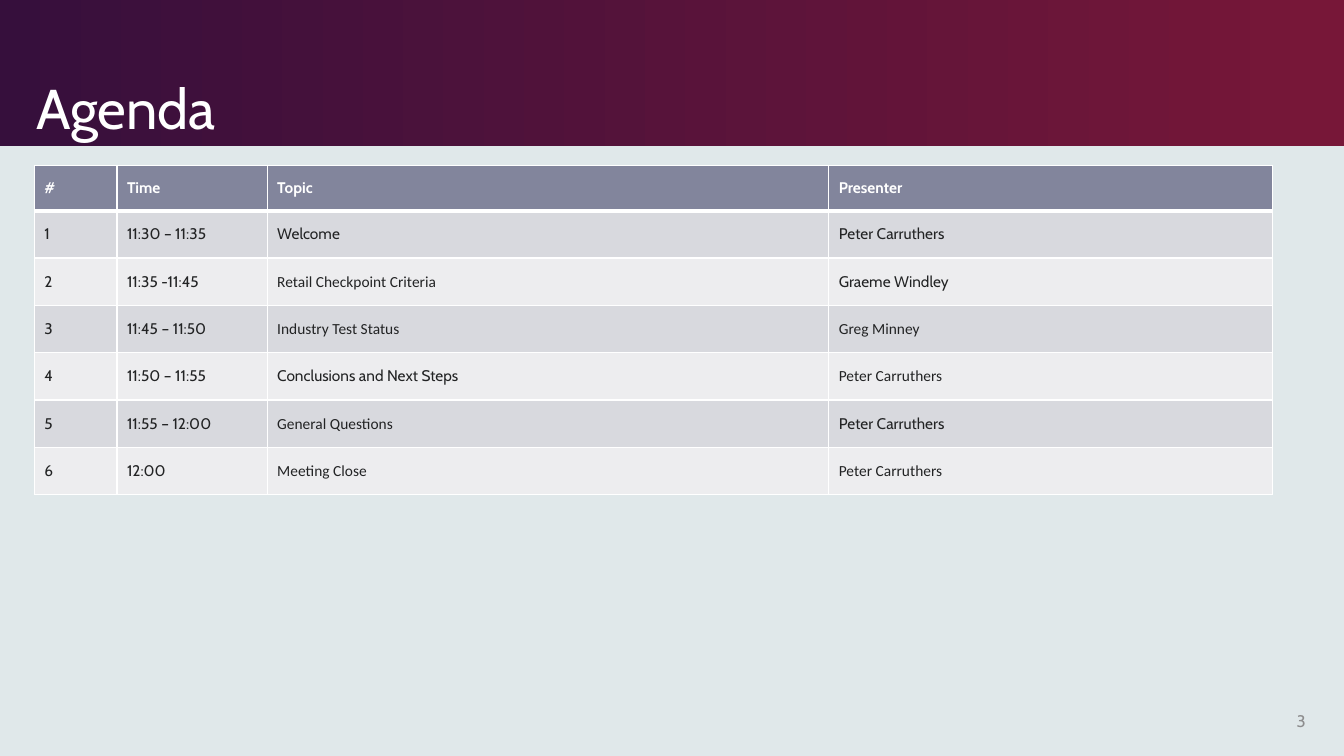
import pptx
import pptx.util
import pptx.dml.color
import pptx.enum.shapes
import pptx.enum.text
import pptx.oxml
import pptx.oxml.ns
from pptx.util import Inches

TITLE = "Agenda"
PAGE = "3"
HEADER = ["#", "Time", "Topic", "Presenter"]
AGENDA = [
    ("1", "11:30 – 11:35", "Welcome", "Peter Carruthers"),
    ("2", "11:35 -11:45", "Retail Checkpoint Criteria", "Graeme Windley"),
    ("3", "11:45 – 11:50", "Industry Test Status", "Greg Minney"),
    ("4", "11:50 – 11:55", "Conclusions and Next Steps", "Peter Carruthers"),
    ("5", "11:55 – 12:00", "General Questions", "Peter Carruthers"),
    ("6", "12:00", "Meeting Close", "Peter Carruthers"),
]
CALIBRI_CELLS = {(2, 2), (3, 2), (3, 3), (4, 3), (5, 2), (6, 2), (6, 3)}
SPACED_CELL = (4, 2)
COL_WIDTHS = [0.82, 1.49, 5.57, 4.4]
HEADER_HEIGHT, ROW_HEIGHT = 0.45, 0.47
COLORS = {
    "background": "E0E8EA", "band_start": "360F3C", "band_end": "771738",
    "white": "FFFFFF", "page": "8D8D8E", "text": "222324",
    "header": "82859C", "odd": "D8D9DE", "even": "EDEDEF",
}
ANCHOR = pptx.enum.text.MSO_ANCHOR
ALIGN = pptx.enum.text.PP_ALIGN


def rgb(name):
    return pptx.dml.color.RGBColor.from_string(COLORS[name])


def write(tf, text, size=11, font="Cabin", color="text", bold=False,
          align=ALIGN.LEFT, line_spacing=None, space_before=0):
    p = tf.paragraphs[0]
    p.alignment = align
    p.line_spacing = line_spacing
    p.space_before = pptx.util.Pt(space_before)
    r = p.add_run()
    r.text = text
    r.font.size = pptx.util.Pt(size)
    r.font.name = font
    r.font.bold = bold
    r.font.color.rgb = rgb(color)


def add_text(s, box, text, anchor, **fmt):
    tf = s.shapes.add_textbox(*map(Inches, box)).text_frame
    tf.word_wrap = True
    tf.vertical_anchor = anchor
    write(tf, text, **fmt)


def set_borders(cell, widths):
    tc_pr = cell._tc.get_or_add_tcPr()
    for i, (side, width) in enumerate(widths.items()):
        ln = pptx.oxml.parse_xml(
            f'<a:ln{side} {pptx.oxml.ns.nsdecls("a")} w="{pptx.util.Pt(width)}">'
            f'<a:solidFill><a:srgbClr val="{COLORS["white"]}"/></a:solidFill>'
            f'</a:ln{side}>')
        tc_pr.insert(i, ln)


def add_band(s, width):
    band = s.shapes.add_shape(pptx.enum.shapes.MSO_SHAPE.RECTANGLE,
                              0, 0, width, Inches(1.45))
    band.shadow.inherit = False
    band.line.fill.background()
    band.fill.gradient()
    band.fill.gradient_angle = 0
    stops = [("band_start", 0), ("band_end", 0.99)]
    for stop, (color, position) in zip(band.fill.gradient_stops, stops):
        stop.color.rgb = rgb(color)
        stop.position = position


def add_agenda(s):
    rows = [HEADER, *AGENDA]
    heights = [HEADER_HEIGHT] + [ROW_HEIGHT] * len(AGENDA)
    table = s.shapes.add_table(
        len(rows), len(HEADER), Inches(0.34), Inches(1.64),
        Inches(sum(COL_WIDTHS)), Inches(sum(heights))).table
    for col, width in zip(table.columns, COL_WIDTHS):
        col.width = Inches(width)
    for i, (row, height) in enumerate(zip(rows, heights)):
        table.rows[i].height = Inches(height)
        head = i == 0
        fill = "header" if head else ("odd" if i % 2 else "even")
        for j, text in enumerate(row):
            cell = table.cell(i, j)
            cell.fill.solid()
            cell.fill.fore_color.rgb = rgb(fill)
            cell.vertical_anchor = ANCHOR.MIDDLE
            if head:
                cell.margin_top = cell.margin_bottom = 0
            set_borders(cell, {"L": 1, "R": 1, "T": 3 if i == 1 else 1,
                               "B": 3 if head else 1})
            write(cell.text_frame, text, bold=head,
                  color="white" if head else "text",
                  font="Calibri" if (i, j) in CALIBRI_CELLS else "Cabin",
                  space_before=6 if (i, j) == SPACED_CELL else 0)


def main():
    prs = pptx.Presentation()
    prs.slide_width, prs.slide_height = Inches(13.33), Inches(7.5)
    s = prs.slides.add_slide(prs.slide_layouts[6])
    s.background.fill.solid()
    s.background.fill.fore_color.rgb = rgb("background")
    add_band(s, prs.slide_width)
    add_text(s, (0.26, 0.15, 9.84, 1.3), TITLE, ANCHOR.BOTTOM,
             size=40, color="white", line_spacing=0.9)
    add_text(s, (12.42, 6.95, 0.63, 0.4), PAGE, ANCHOR.MIDDLE,
             size=12, color="page", align=ALIGN.RIGHT)
    add_agenda(s)
    prs.save("out.pptx")


if __name__ == "__main__":
    main()
